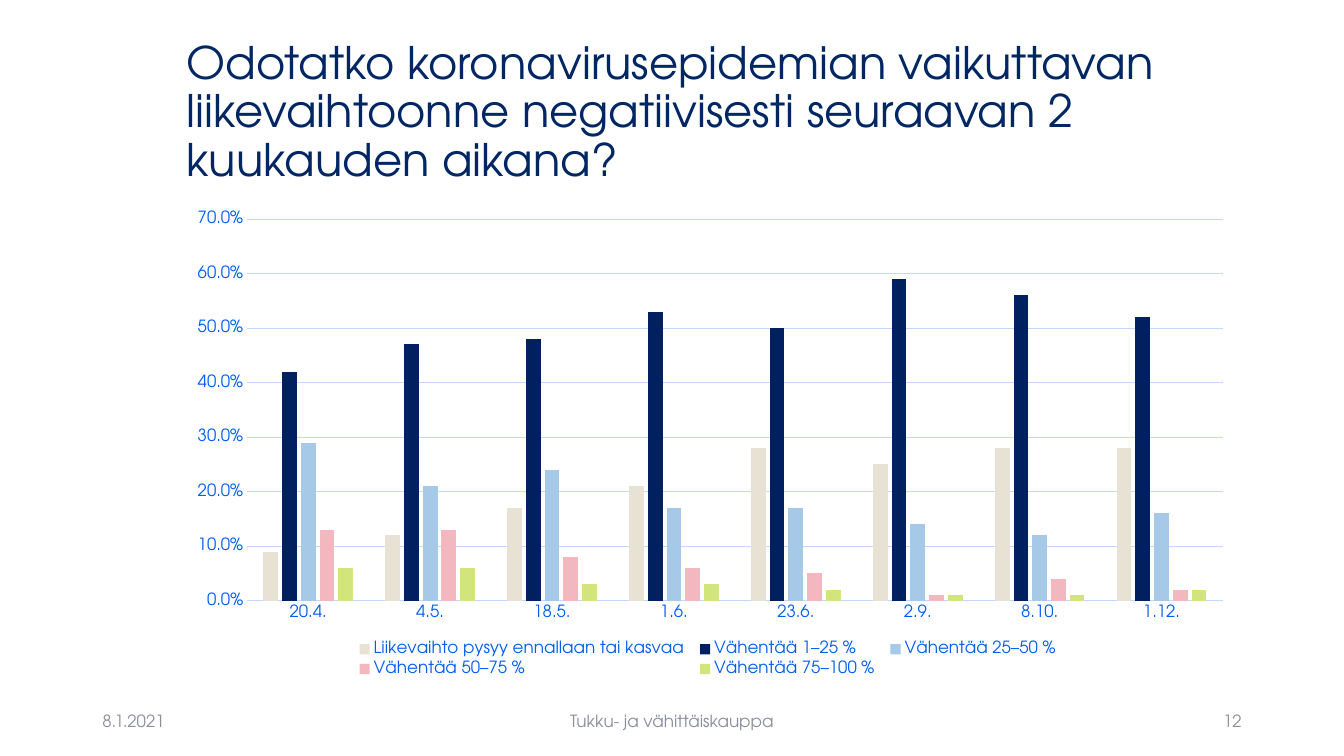
from pptx import Presentation
from pptx.chart.data import CategoryChartData
from pptx.dml.color import RGBColor
from pptx.enum.chart import XL_CHART_TYPE, XL_LEGEND_POSITION, XL_TICK_MARK
from pptx.enum.text import MSO_ANCHOR, MSO_AUTO_SIZE, PP_ALIGN
from pptx.util import Pt

FONT = "TeX Gyre Adventor"
NAVY = RGBColor(0x00, 0x26, 0x63)
BLUE = RGBColor(0x00, 0x5D, 0xF3)
GREY = RGBColor(0x8C, 0x8E, 0x9F)
GRID = RGBColor(0xC1, 0xD9, 0xFF)
SAND = RGBColor(0xE8, 0xE2, 0xD5)
DEEP_BLUE = RGBColor(0x00, 0x20, 0x60)
SKY = RGBColor(0xA5, 0xC9, 0xE7)
PINK = RGBColor(0xF2, 0xB7, 0xBF)
LIME = RGBColor(0xD1, 0xE5, 0x7C)

SURVEY_DATES = ["20.4.", "4.5.", "18.5.", "1.6.", "23.6.", "2.9.", "8.10.", "1.12."]
ANSWERS = [
    ("Liikevaihto pysyy ennallaan tai kasvaa ", SAND,
     [0.09, 0.12, 0.17, 0.21, 0.28, 0.25, 0.28, 0.28]),
    ("Vähentää 1–25 %", DEEP_BLUE,
     [0.42, 0.47, 0.48, 0.53, 0.5, 0.59, 0.56, 0.52]),
    ("Vähentää 25–50 % ", SKY,
     [0.29, 0.21, 0.24, 0.17, 0.17, 0.14, 0.12, 0.16]),
    ("Vähentää 50–75 %", PINK,
     [0.13, 0.13, 0.08, 0.06, 0.05, 0.01, 0.04, 0.02]),
    ("Vähentää 75–100 % ", LIME,
     [0.06, 0.06, 0.03, 0.03, 0.02, 0.01, 0.01, 0.02]),
]


def style_font(font, size, color):
    font.name = FONT
    font.size = Pt(size)
    font.bold = False
    font.color.rgb = color


def write_text(shape, text, size=12, color=GREY, align=PP_ALIGN.LEFT, line_spacing=1.0):
    frame = shape.text_frame
    frame.word_wrap = True
    frame.auto_size = MSO_AUTO_SIZE.NONE
    frame.vertical_anchor = MSO_ANCHOR.MIDDLE
    paragraph = frame.paragraphs[0]
    paragraph.alignment = align
    paragraph.line_spacing = line_spacing
    run = paragraph.add_run()
    run.text = text
    style_font(run.font, size, color)


def add_question(slide, left, top, width, height):
    question = slide.shapes.title
    question.left, question.top = Pt(left), Pt(top)
    question.width, question.height = Pt(width), Pt(height)
    write_text(question, "Odotatko koronavirusepidemian vaikuttavan liikevaihtoonne "
               "negatiivisesti seuraavan 2 kuukauden aikana?",
               size=32, color=NAVY, line_spacing=0.9)


def format_axes(chart):
    dates, shares = chart.category_axis, chart.value_axis
    for axis in (dates, shares):
        axis.major_tick_mark = axis.minor_tick_mark = XL_TICK_MARK.NONE
        style_font(axis.tick_labels.font, 12, BLUE)
    shares.minimum_scale, shares.maximum_scale, shares.major_unit = 0, 0.7, 0.1
    shares.tick_labels.number_format = "0.0%"
    shares.tick_labels.number_format_is_linked = False
    shares.format.line.fill.background()
    for line in (dates.format.line, shares.major_gridlines.format.line):
        line.color.rgb = GRID
        line.width = Pt(0.75)


def add_answer_chart(slide, left, top, width, height):
    data = CategoryChartData(number_format="0.0%")
    data.categories = SURVEY_DATES
    for answer, _, shares in ANSWERS:
        data.add_series(answer, shares)
    chart = slide.shapes.add_chart(
        XL_CHART_TYPE.COLUMN_CLUSTERED, Pt(left), Pt(top), Pt(width), Pt(height), data).chart
    style_font(chart.font, 10, NAVY)
    chart.has_title = False
    format_axes(chart)

    columns = chart.plots[0]
    columns.gap_width, columns.overlap = 219, -27
    columns.vary_by_categories = False
    for series, (_, color, _) in zip(columns.series, ANSWERS):
        series.invert_if_negative = False
        series.format.fill.solid()
        series.format.fill.fore_color.rgb = color

    chart.has_legend = True
    chart.legend.position = XL_LEGEND_POSITION.BOTTOM
    chart.legend.include_in_layout = False
    style_font(chart.legend.font, 12, BLUE)


def add_footer(slide, left, top, width, height):
    """Place the date, topic and page number at the left, centre and right."""
    side, middle = 216, 324
    for text, offset, part_width, align in (
        ("8.1.2021", 0, side, PP_ALIGN.LEFT),
        ("Tukku- ja vähittäiskauppa", (width - middle) / 2, middle, PP_ALIGN.CENTER),
        ("12", width - side, side, PP_ALIGN.RIGHT),
    ):
        part = slide.shapes.add_textbox(Pt(left + offset), Pt(top), Pt(part_width), Pt(height))
        write_text(part, text, align=align)


def main():
    deck = Presentation()
    deck.slide_width, deck.slide_height = Pt(960), Pt(540)
    slide = deck.slides.add_slide(deck.slide_layouts.get_by_name("Title Only"))
    add_question(slide, 126, 28.8, 762.5, 104.4)
    add_answer_chart(slide, 126, 144, 762.5, 342.4)
    add_footer(slide, 66, 500.5, 828, 28.75)
    deck.save("out.pptx")


if __name__ == "__main__":
    main()
